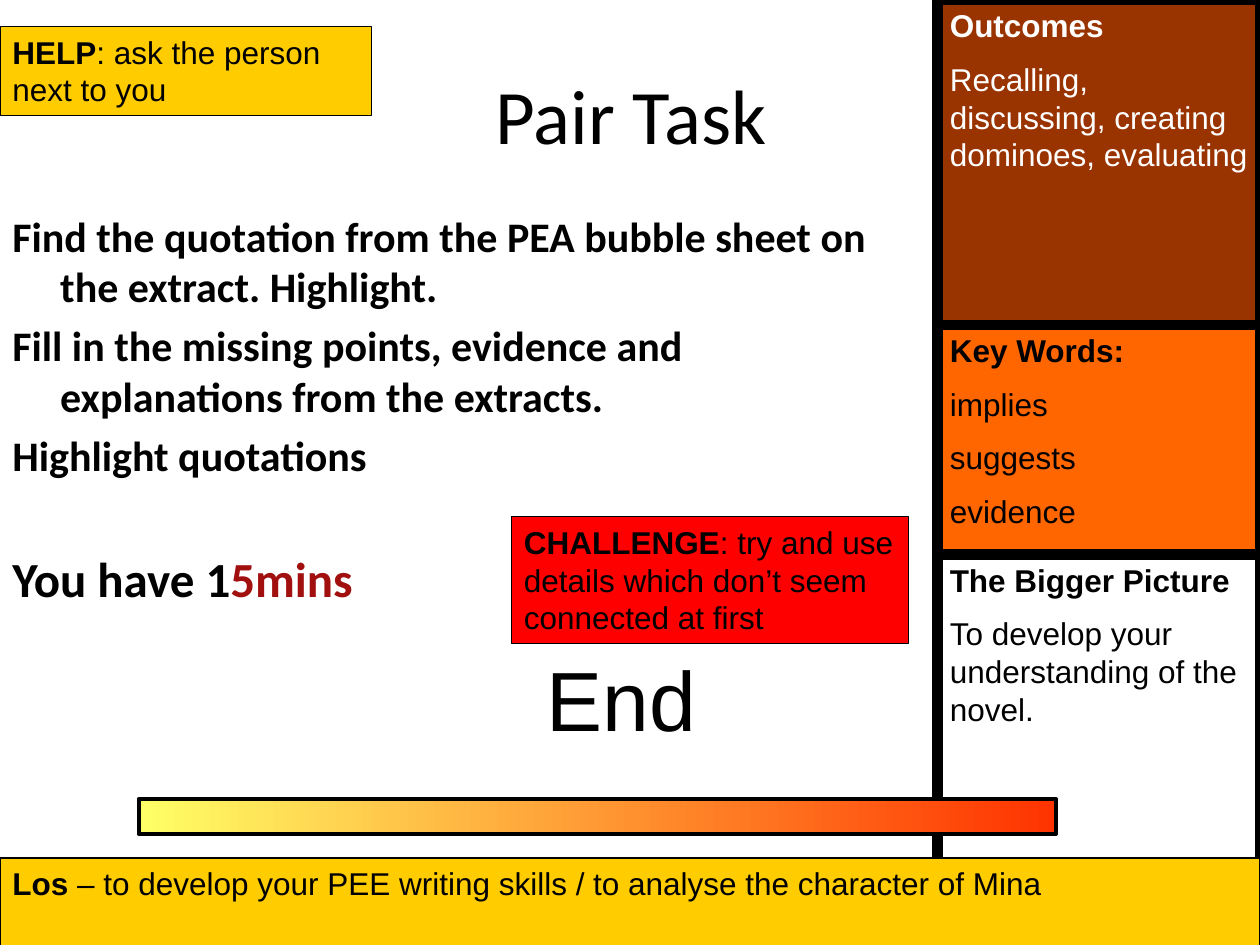
from dataclasses import dataclass

from pptx import Presentation
from pptx import util as u
from pptx.dml.color import RGBColor
from pptx.enum import shapes, text

# The slide is a grid of 100 columns by 75 rows
COLUMNS, ROWS = 100, 75
WIDTH, HEIGHT = u.Inches(10), u.Inches(7.5)
BLACK, WHITE, GOLD = "000000", "FFFFFF", "FFCC00"


@dataclass
class Area:
    col: float
    row: float
    cols: float
    rows: float

    def lengths(self) -> list[int]:
        return [round(WIDTH * self.col / COLUMNS), round(HEIGHT * self.row / ROWS),
                round(WIDTH * self.cols / COLUMNS), round(HEIGHT * self.rows / ROWS)]


@dataclass
class Run:
    words: str
    bold: bool = False
    color: str = BLACK
    size: float = 18
    font: str = "Arial"


@dataclass
class Para:
    runs: list[Run]
    before: float = 0
    hanging: float = 0


@dataclass
class Box:
    area: Area
    paras: list[Para]
    fill: str
    line_width: float = 0.75


def rgb(value: str) -> RGBColor:
    return RGBColor.from_string(value)


def write(frame, paras: list[Para], align=text.PP_ALIGN.LEFT,
          anchor=text.MSO_ANCHOR.TOP, wrap: bool = True) -> None:
    frame.word_wrap = wrap
    frame.vertical_anchor = anchor
    for index, para in enumerate(paras):
        line = frame.paragraphs[0] if index == 0 else frame.add_paragraph()
        line.alignment = align
        line.space_before = u.Pt(para.before)
        if para.hanging:
            props = line._p.get_or_add_pPr()
            props.set("marL", str(u.Inches(para.hanging)))
            props.set("indent", str(-u.Inches(para.hanging)))
        for part in para.runs:
            run = line.add_run()
            run.text = part.words
            run.font.name, run.font.size = part.font, u.Pt(part.size)
            run.font.bold = part.bold
            run.font.color.rgb = rgb(part.color)


def add_rectangle(slide, area: Area, line_width: float):
    rectangle = slide.shapes.add_shape(shapes.MSO_SHAPE.RECTANGLE, *area.lengths())
    rectangle.shadow.inherit = False
    rectangle.line.color.rgb = rgb(BLACK)
    rectangle.line.width = u.Pt(line_width)
    return rectangle


def draw_box(slide, box: Box) -> None:
    rectangle = add_rectangle(slide, box.area, box.line_width)
    rectangle.fill.solid()
    rectangle.fill.fore_color.rgb = rgb(box.fill)
    write(rectangle.text_frame, box.paras)


def draw_text(slide, area: Area, paras: list[Para], **layout) -> None:
    write(slide.shapes.add_textbox(*area.lengths()).text_frame, paras, **layout)


def draw_timer(slide, area: Area, start: str, end: str) -> None:
    timer = add_rectangle(slide, area, 2.25)
    timer.fill.gradient()
    timer.fill.gradient_angle = 0
    for stop, color, position in zip(timer.fill.gradient_stops, (start, end), (0, 1)):
        stop.color.rgb = rgb(color)
        stop.position = position


def panel(top: float, bottom: float, fill: str, color: str,
          heading: str, *lines: str) -> Box:
    body = [Para([Run(line, color=color)], before=9) for line in lines]
    return Box(Area(74.4, top, 25.6, bottom - top),
               [Para([Run(heading, True, color)]), *body], fill, 6)


def note(area: Area, fill: str, label: str, words: str) -> Box:
    return Box(area, [Para([Run(label, True), Run(words)])], fill)


def task(words: str, before: float = 5) -> Para:
    return Para([Run(words, True, size=24, font="Calibri")], before, 0.38)


BOXES = [
    # Sidebar panels
    panel(0, 25.8, "993300", WHITE, "Outcomes",
          "Recalling, discussing, creating dominoes, evaluating"),
    panel(25.8, 44, "FF6600", BLACK, "Key Words:", "implies", "suggests", "evidence"),
    panel(44, 75, WHITE, BLACK, "The Bigger Picture",
          "To develop your understanding of the novel."),
    # Objectives strip and the two notes
    note(Area(0, 68.1, 100, 8.6), GOLD, "Los",
         " – to develop your PEE writing skills / to analyse the character of Mina"),
    note(Area(40.6, 41, 31.5, 10.1), "FF0000", "CHALLENGE",
         ": try and use details which don’t seem connected at first"),
    note(Area(0, 2.1, 29.5, 7.1), GOLD, "HELP", ": ask the person next to you"),
]

TASKS = [
    task("Find the quotation from the PEA bubble sheet on the extract. Highlight.", 0),
    task("Fill in the missing points, evidence and explanations from the extracts."),
    task("Highlight quotations"),
    Para([Run("You have 1", True, size=28, font="Calibri"),
          Run("5mins", True, "A10F0F", 28, "Calibri")], 39, 0.38),
]


def main() -> None:
    deck = Presentation()
    deck.slide_width, deck.slide_height = WIDTH, HEIGHT
    slide = deck.slides.add_slide(deck.slide_layouts[6])

    for box in BOXES:
        draw_box(slide, box)

    # Title
    draw_text(slide, Area(5.1, 2.8, 90, 12.5),
              [Para([Run("Pair Task", size=44, font="Calibri")])],
              align=text.PP_ALIGN.CENTER, anchor=text.MSO_ANCHOR.MIDDLE)

    # Timer bar with its end label
    draw_timer(slide, Area(11, 63.4, 72.8, 2.8), "FFFF66", "FF3300")
    draw_text(slide, Area(42.4, 50.9, 13.9, 9), [Para([Run("End", size=48)])], wrap=False)

    # Task list
    draw_text(slide, Area(0, 16.2, 71.4, 49.5), TASKS)

    deck.save("out.pptx")


if __name__ == "__main__":
    main()
